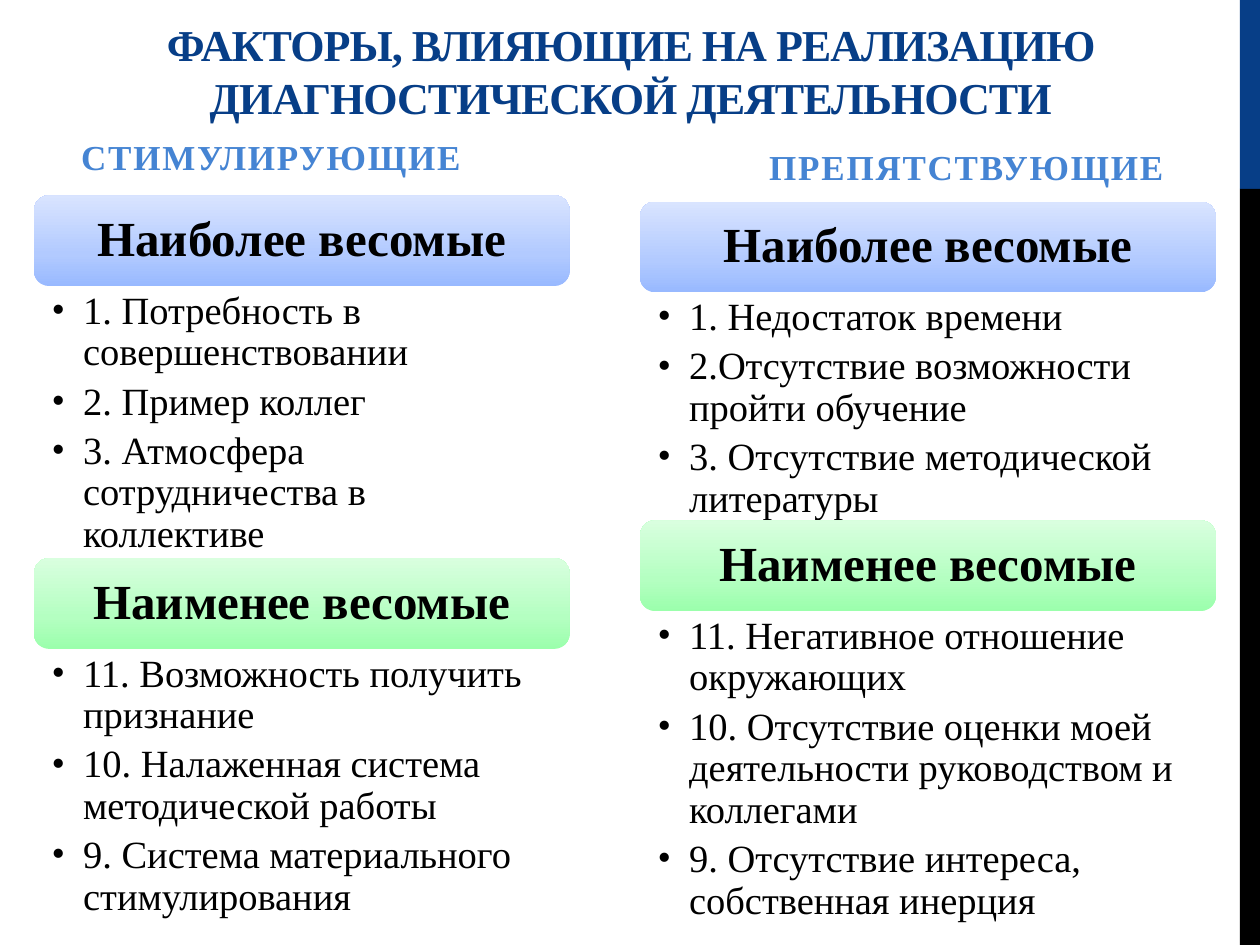
from copy import deepcopy

from lxml.etree import SubElement
from pptx import Presentation
from pptx.dml.color import RGBColor
from pptx.enum.shapes import MSO_SHAPE
from pptx.enum.text import MSO_ANCHOR, MSO_AUTO_SIZE, PP_ALIGN
from pptx.oxml.ns import qn
from pptx.util import Inches, Pt

FONT = "Times New Roman"
COLORS = {"navy": "073E87", "heading": "4584D3", "black": "000000"}
# Gradient stops from bottom to top: position and colour
GRADIENTS = {
    "most": {0: "98B9FF", 0.35: "B2CAFF", 1: "D9E4FF"},
    "least": {0: "9BFFAC", 0.35: "B4FFC1", 1: "D9FFDF"},
}
BAND_HEIGHT = 0.72
COLUMNS = [
    {
        "heading": "СТИМУЛИРУЮЩИЕ",
        "heading_box": (0.35, 0.99, 3.6, 0.47),
        "box": (0.27, 1.55, 4.25),
        "list_heights": (2.16, 2.16),
        "most": [
            "1. Потребность в совершенствовании",
            "2. Пример коллег",
            "3. Атмосфера сотрудничества в коллективе",
        ],
        "least": [
            "11. Возможность получить признание",
            "10. Налаженная система методической работы",
            "9. Система материального стимулирования",
        ],
    },
    {
        "heading": "ПРЕПЯТСТВУЮЩИЕ",
        "heading_box": (5.87, 0.99, 3.6, 0.55),
        "box": (5.08, 1.6, 4.57),
        "list_heights": (1.81, 2.47),
        "most": [
            "1. Недостаток времени",
            "2.Отсутствие возможности пройти обучение",
            "3. Отсутствие методической литературы",
        ],
        "least": [
            "11. Негативное отношение окружающих",
            "10. Отсутствие оценки моей деятельности руководством и коллегами",
            "9. Отсутствие интереса, собственная инерция",
        ],
    },
]


def write_text(shape, lines, *, size, color="black", bold=False, align=PP_ALIGN.CENTER,
               anchor=MSO_ANCHOR.MIDDLE, margins=(0.1, 0.05, 0.1, 0.05),
               line_spacing=1.0, before=0, after=0, tracking=0, bullet=False):
    """Fill a shape with paragraphs; margins run left, top, right, bottom."""
    frame = shape.text_frame
    frame.word_wrap = True
    frame.auto_size = MSO_AUTO_SIZE.NONE
    frame.vertical_anchor = anchor
    (frame.margin_left, frame.margin_top,
     frame.margin_right, frame.margin_bottom) = map(Inches, margins)
    for index, line in enumerate(lines):
        paragraph = frame.add_paragraph() if index else frame.paragraphs[0]
        paragraph.alignment = align
        paragraph.line_spacing = line_spacing
        paragraph.space_before = Pt(before)
        paragraph.space_after = Pt(after)
        run = paragraph.add_run()
        run.text = line
        run.font.name = FONT
        run.font.size = Pt(size)
        run.font.bold = bold
        run.font.color.rgb = RGBColor.from_string(COLORS[color])
        if tracking:
            run.font._element.set("spc", str(int(tracking * 100)))
        if bullet:
            add_bullet(paragraph)


def add_bullet(paragraph):
    properties = paragraph._p.get_or_add_pPr()
    properties.set("marL", str(Inches(0.25)))
    properties.set("indent", str(Inches(-0.25)))
    SubElement(properties, qn("a:buFont")).set("typeface", FONT)
    SubElement(properties, qn("a:buChar")).set("char", "•")


def place(shape, box):
    shape.left, shape.top, shape.width, shape.height = map(Inches, box)


def add_plain_shape(slide, kind, box):
    shape = slide.shapes.add_shape(kind, *map(Inches, box))
    shape.shadow.inherit = False
    shape.line.fill.background()
    return shape


def fill_gradient(shape, stops):
    """Shade a shape upwards through three stops."""
    fill = shape.fill
    fill.gradient()
    fill.gradient_angle = 90
    stop_list = shape._element.spPr.find(qn("a:gradFill")).find(qn("a:gsLst"))
    stop_list.insert(1, deepcopy(stop_list[0]))
    for stop, (position, color) in zip(fill.gradient_stops, stops.items()):
        stop.position = position
        stop.color.rgb = RGBColor.from_string(color)


def add_side_stripe(slide, left, width):
    for top, height, color in ((0, 1.5, "navy"), (1.5, 6, "black")):
        stripe = add_plain_shape(slide, MSO_SHAPE.RECTANGLE, (left, top, width, height))
        stripe.fill.solid()
        stripe.fill.fore_color.rgb = RGBColor.from_string(COLORS[color])


def add_factor_group(slide, box, title, factors, gradient):
    """Place a shaded band with its list of factors beneath."""
    left, top, width, list_height = box
    band = add_plain_shape(slide, MSO_SHAPE.ROUNDED_RECTANGLE, (left, top, width, BAND_HEIGHT))
    fill_gradient(band, gradient)
    write_text(band, [title], size=28, bold=True, line_spacing=0.9)
    factor_list = slide.shapes.add_textbox(
        *map(Inches, (left, top + BAND_HEIGHT, width, list_height)))
    write_text(factor_list, factors, size=22, align=PP_ALIGN.LEFT, anchor=MSO_ANCHOR.TOP,
               margins=(0.14, 0.04, 0.22, 0.04), line_spacing=0.9, after=4.4, bullet=True)


def add_column(slide, heading, column):
    place(heading, column["heading_box"])
    write_text(heading, [column["heading"]], size=20, color="heading", bold=True,
               anchor=MSO_ANCHOR.BOTTOM, before=4, after=6, tracking=1)
    left, top, width = column["box"]
    most_height, least_height = column["list_heights"]
    add_factor_group(slide, (left, top, width, most_height), "Наиболее весомые",
                     column["most"], GRADIENTS["most"])
    add_factor_group(slide, (left, top + BAND_HEIGHT + most_height, width, least_height),
                     "Наименее весомые", column["least"], GRADIENTS["least"])


def main():
    presentation = Presentation()
    presentation.slide_width, presentation.slide_height = Inches(10), Inches(7.5)
    comparison_layout = presentation.slide_layouts[4]
    slide = presentation.slides.add_slide(comparison_layout)
    title, left_heading, left_body, right_heading, right_body = slide.placeholders
    for unused in (left_body, right_body):
        unused._element.getparent().remove(unused._element)

    add_side_stripe(slide, 9.84, 0.16)
    place(title, (0.2, 0.05, 9.61, 0.98))
    write_text(title, ["ФАКТОРЫ, ВЛИЯЮЩИЕ НА РЕАЛИЗАЦИЮ ДИАГНОСТИЧЕСКОЙ ДЕЯТЕЛЬНОСТИ"],
               size=25.2, color="navy", bold=True, anchor=MSO_ANCHOR.BOTTOM, tracking=-0.6)
    for heading, column in zip((left_heading, right_heading), COLUMNS):
        add_column(slide, heading, column)
    presentation.save("out.pptx")


if __name__ == "__main__":
    main()
